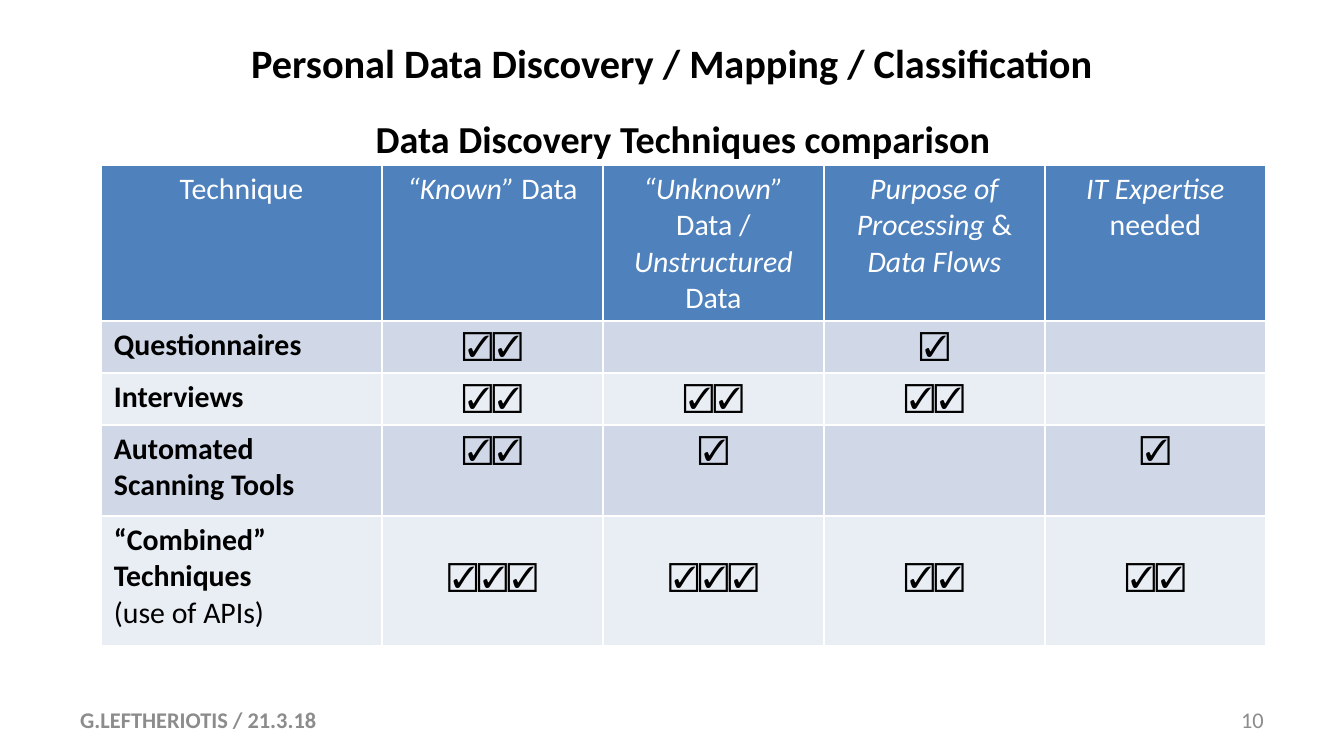
from dataclasses import dataclass
from lxml.etree import SubElement
from pptx import Presentation
from pptx.dml.color import RGBColor
from pptx.enum.text import MSO_ANCHOR, PP_ALIGN
from pptx.oxml.ns import qn
from pptx.util import Pt

# Content: *stars* set italics, numbers count the check marks
TITLE = "Personal Data Discovery / Mapping / Classification"
HEAD = "Data Discovery Techniques comparison"
AUTHOR = "G.LEFTHERIOTIS / 21.3.18"
PAGE = "10"
MARK = "☑"
TOPICS = [
    "Technique",
    "*“Known” *Data",
    "*“Unknown” *Data / *Unstructured *Data",
    "*Purpose of Processing *& *Data Flows*",
    "*IT Expertise* needed",
]
RATINGS = [
    ("Questionnaires", 2, 0, 1, 0),
    ("Interviews", 2, 2, 2, 0),
    ("Automated Scanning Tools", 2, 1, 0, 1),
    ("“Combined” Techniques\n(use of APIs)", 3, 3, 2, 2),
]
COLS = [281] + [221] * 4
ROWS = [156, 52, 52, 91, 130]


@dataclass
class Theme:
    font: str = "Calibri"
    ink: str = "000000"
    white: str = "FFFFFF"
    gray: str = "8C8C8C"
    blue: str = "4F81BD"
    bands: tuple = ("D0D8E8", "E9EDF4")
    title: float = 21.6
    head: float = 20.4
    body: float = 16
    foot: float = 12
    rule: float = 1


THEME = Theme()
LEFT, CENTER, RIGHT = PP_ALIGN.LEFT, PP_ALIGN.CENTER, PP_ALIGN.RIGHT


def px(n):
    return round(n * 914400 / 134.4)


def style(run, size, color, bold, italic=False):
    font = run.font
    font.name, font.size = THEME.font, Pt(size)
    font.bold, font.italic = bold, italic
    font.color.rgb = RGBColor.from_string(color)


def label(slide, text, box, size, color, align, bold=True, anchor=MSO_ANCHOR.MIDDLE):
    frame = slide.shapes.add_textbox(*map(px, box)).text_frame
    frame.word_wrap = True
    frame.vertical_anchor = anchor
    frame.text = text
    para = frame.paragraphs[0]
    para.alignment = align
    style(para.runs[0], size, color, bold)


def border(cell):
    props = cell._tc.get_or_add_tcPr()
    for i, side in enumerate(("lnL", "lnR", "lnT", "lnB")):
        line = props.makeelement(qn(f"a:{side}"), {"w": str(Pt(THEME.rule))})
        fill = SubElement(line, qn("a:solidFill"))
        SubElement(fill, qn("a:srgbClr"), val=THEME.white)
        props.insert(i, line)


def write(cell, text, color, align, bold):
    frame = cell.text_frame
    frame.text = text.replace("*", "")
    for i, (para, line) in enumerate(zip(frame.paragraphs, text.split("\n"))):
        para.alignment = align
        if not line:
            SubElement(para._p, qn("a:endParaRPr"), sz=str(THEME.body * 100))
            continue
        para.clear()
        for j, part in enumerate(line.split("*")):
            if part:
                run = para.add_run()
                run.text = part
                style(run, THEME.body, color, bold and i == 0, j % 2 == 1)


def grid(slide):
    shape = slide.shapes.add_table(
        len(ROWS), len(COLS), px(101), px(165), px(sum(COLS)), px(sum(ROWS)))
    table = shape.table
    table.first_row = table.horz_banding = False
    for col, width in zip(table.columns, COLS):
        col.width = px(width)
    for row, height in zip(table.rows, ROWS):
        row.height = px(height)

    for r, items in enumerate([TOPICS] + RATINGS):
        for c, item in enumerate(items):
            cell = table.cell(r, c)
            cell.margin_left = cell.margin_right = px(13)
            # Marks in the last row start one text line lower
            cell.margin_top = px(42 if r == len(RATINGS) and c else 6)
            cell.margin_bottom = px(6)
            cell.fill.solid()
            back = THEME.bands[(r - 1) % 2] if r else THEME.blue
            cell.fill.fore_color.rgb = RGBColor.from_string(back)
            border(cell)
            text = item if isinstance(item, str) else MARK * item
            align = LEFT if r and not c else CENTER
            write(cell, text, THEME.ink if r else THEME.white, align, r > 0)


def main():
    deck = Presentation()
    deck.slide_width, deck.slide_height = px(1344), px(756)
    slide = deck.slides.add_slide(deck.slide_layouts[6])

    # Headings
    label(slide, HEAD, (78, 109, 1210, 51), THEME.head, THEME.ink, CENTER,
          anchor=MSO_ANCHOR.TOP)
    label(slide, TITLE, (67, 31, 1210, 62), THEME.title, THEME.ink, CENTER)

    # Comparison table
    grid(slide)

    # Footer
    label(slide, PAGE, (964, 700, 313, 40), THEME.foot, THEME.gray, RIGHT, bold=False)
    label(slide, AUTHOR, (67, 700, 313, 40), THEME.foot, THEME.gray, LEFT)

    deck.save("out.pptx")


if __name__ == "__main__":
    main()
